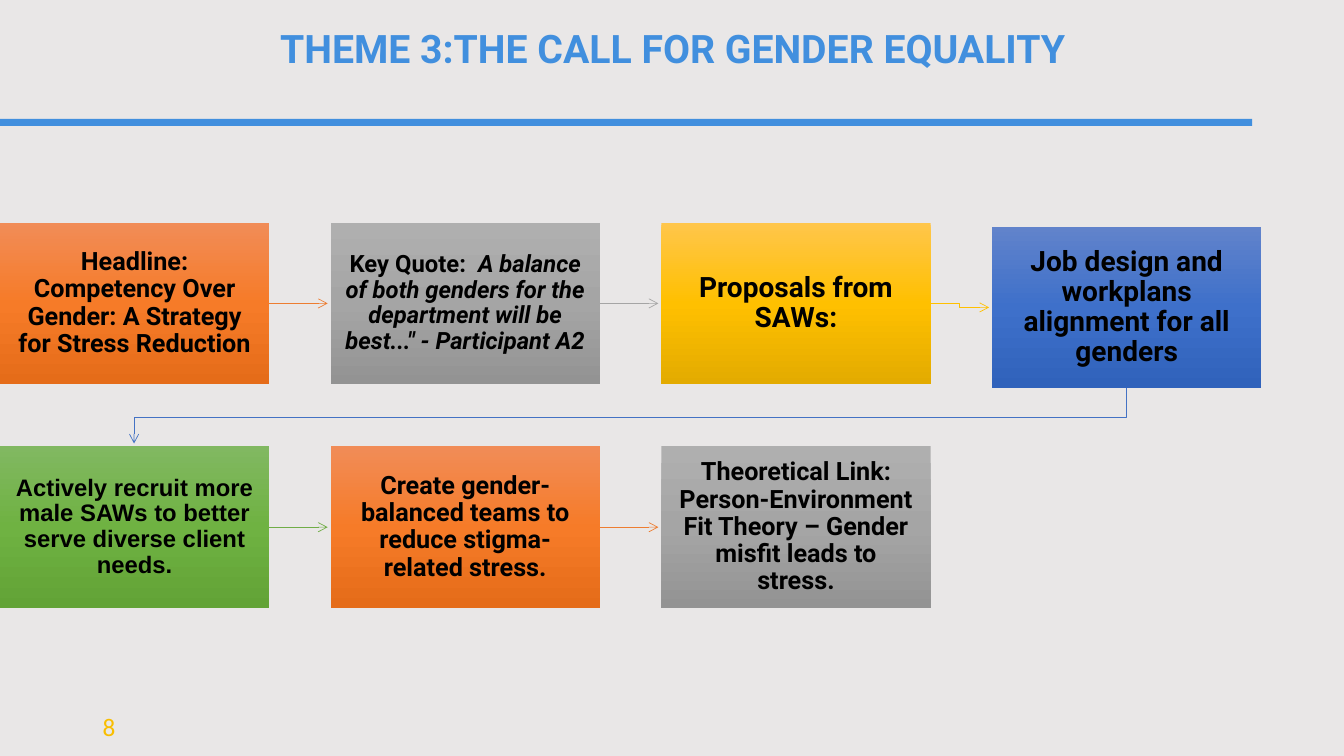
from lxml import etree
from pptx import Presentation
from pptx import util as u
from pptx.dml.color import RGBColor
from pptx.enum import shapes, text
from pptx.oxml.ns import qn

PX = 9144  # EMU per px, 100 px to the inch
BOX_W, BOX_H, STEP, GAP = 267, 160, 328, 3
TOP_ROW, LOWER_ROW, BLUE_TOP = 221, 443, 225

# Theme accent for the arrow, then the three gradient stops of the box
ORANGE = ("ED7D31", "F18C57", "F67B28", "E56C19")
GREY = ("A5A5A5", "AFAFAF", "A5A5A5", "939393")
GOLD = ("FFC000", "FFC64B", "FFC000", "E3AB00")
BLUE = ("4472C4", "6183CB", "3E70CA", "3062BB")
GREEN = ("70AD47", "81B861", "6FB242", "62A336")

# column, top, colours, font, size, text, italic text
steps = [
    (0, TOP_ROW, ORANGE, "Roboto", 18,
     "Headline: Competency Over Gender: A Strategy for Stress Reduction", ""),
    (1, TOP_ROW, GREY, "Roboto", 17, "Key Quote:  ",
     "A balance of both genders for the department will be best...\" - Participant A2"),
    (2, TOP_ROW, GOLD, "Roboto", 20, "Proposals from SAWs:", ""),
    (3, BLUE_TOP, BLUE, "Roboto", 20,
     "Job design and workplans alignment for all genders", ""),
    (0, LOWER_ROW, GREEN, "Arial", 17,
     "Actively recruit more male SAWs to better serve diverse client needs.", ""),
    (1, LOWER_ROW, ORANGE, "Roboto", 18,
     "Create gender-balanced teams to reduce stigma-related stress.", ""),
    (2, LOWER_ROW, GREY, "Roboto", 18,
     "Theoretical Link: Person-Environment Fit Theory – Gender misfit leads to stress.", ""),
]


def rgb(value):
    return RGBColor.from_string(value)


def style_arrow(arrow, color):
    arrow.line.color.rgb = rgb(color)
    arrow.line.width = u.Pt(0.5)
    properties = arrow.line._get_or_add_ln()
    etree.SubElement(properties, qn("a:tailEnd"), type="arrow")
    etree.SubElement(properties.getparent(), qn("a:effectLst"))


deck = Presentation()
deck.slide_width, deck.slide_height = 1333 * PX, 750 * PX
page = deck.slides.add_slide(deck.slide_layouts[6])
page.background.fill.solid()
page.background.fill.fore_color.rgb = rgb("E9E7E7")

# Rule under the title
rule = page.shapes.add_shape(shapes.MSO_SHAPE.RECTANGLE, 0, 118 * PX, 1242 * PX, 7 * PX)
rule.shadow.inherit = False
rule.fill.solid()
rule.fill.fore_color.rgb = rgb("418FDE")
rule.line.fill.background()

# Title and page number
for left, top, width, height, words, font, size, color, bold, align in [
    (92, 10, 1150, 81, "THEME 3:THE CALL FOR GENDER EQUALITY",
     "Roboto", 28, "418FDE", True, text.PP_ALIGN.CENTER),
    (92, 701, 116, 40, "8", "Calibri", 18, "F9BE00", False, text.PP_ALIGN.LEFT),
]:
    label = page.shapes.add_textbox(left * PX, top * PX, width * PX, height * PX)
    label.text_frame.word_wrap = True
    label.text_frame.vertical_anchor = text.MSO_ANCHOR.MIDDLE
    para = label.text_frame.paragraphs[0]
    para.text = words
    para.alignment = align
    para.line_spacing = 0.9 if bold else 1.0
    para.font.name, para.font.size, para.font.bold = font, u.Pt(size), bold
    para.font.color.rgb = rgb(color)

# Step boxes
boxes = []
for column, top, colors, font, size, words, quote in steps:
    box = page.shapes.add_shape(shapes.MSO_SHAPE.RECTANGLE, column * STEP * PX, top * PX,
                                BOX_W * PX, BOX_H * PX)
    box.shadow.inherit = False
    box.line.fill.background()
    box.fill.gradient()
    box.fill.gradient_angle = 270
    stops = box.fill._fill._gradFill.find(qn("a:gsLst"))
    for stop in list(stops):
        stops.remove(stop)
    for position, color in zip((0, 50000, 100000), colors[1:]):
        stop = etree.SubElement(stops, qn("a:gs"), pos=str(position))
        etree.SubElement(stop, qn("a:srgbClr"), val=color)

    frame = box.text_frame
    frame.word_wrap = True
    frame.vertical_anchor = text.MSO_ANCHOR.MIDDLE
    frame.margin_left = frame.margin_right = 13 * PX
    frame.margin_top = frame.margin_bottom = 14 * PX
    para = frame.paragraphs[0]
    para.alignment = text.PP_ALIGN.CENTER
    para.line_spacing = 0.9
    para.font.name, para.font.size, para.font.bold = font, u.Pt(size), True
    para.font.color.rgb = rgb("000000")
    para.add_run().text = words
    if quote:
        span = para.add_run()
        span.text = quote
        span.font.italic = True
    boxes.append(box)

# Arrows between neighbours in a row
for index, (box, following) in enumerate(zip(boxes, boxes[1:])):
    if following.left < box.left:
        continue
    kind = shapes.MSO_CONNECTOR.STRAIGHT if box.top == following.top else shapes.MSO_CONNECTOR.ELBOW
    arrow = page.shapes.add_connector(kind, box.left + box.width, box.top + box.height // 2,
                                      following.left - GAP * PX,
                                      following.top + following.height // 2)
    arrow.begin_connect(box, 3)
    style_arrow(arrow, steps[index][2][0])

# Arrow from the end of the top row to the start of the lower row
start_x, end_x = 3 * STEP + BOX_W // 2, BOX_W // 2
builder = page.shapes.build_freeform(start_x, BLUE_TOP + BOX_H, scale=PX)
builder.add_line_segments([(start_x, 414), (end_x, 414), (end_x, LOWER_ROW - GAP)], close=False)
turn = builder.convert_to_shape()
turn.fill.background()
style_arrow(turn, BLUE[0])

deck.save("out.pptx")
